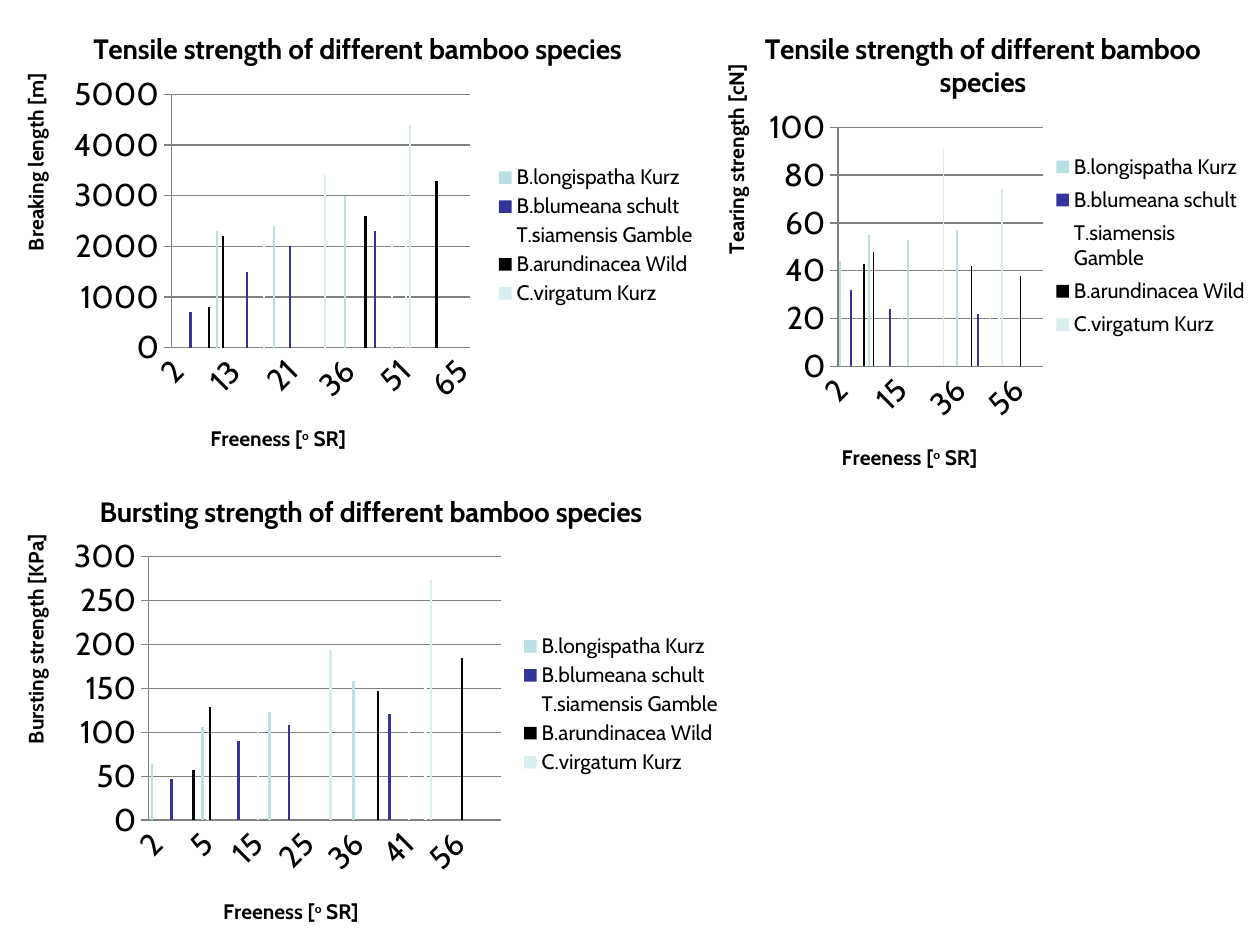
from lxml import etree
from pptx import Presentation
from pptx.chart.data import CategoryChartData
from pptx.dml.color import RGBColor
from pptx.enum.chart import XL_CHART_TYPE, XL_LEGEND_POSITION, XL_TICK_MARK
from pptx.oxml import parse_xml
from pptx.oxml.ns import nsdecls, qn
from pptx.util import Inches, Pt

BLACK = RGBColor(0x00, 0x00, 0x00)
GREY = RGBColor(0x80, 0x80, 0x80)
FONT_NAME = "Cabin"

# Freeness grades, and for each species its colour and measured grades
FREENESS = [2, 3, 4, 5, 13, 14, 15, 18, 21, 25, 27,
            35, 36, 37, 38, 41, 51, 54, 56, 61, 65]
SPECIES = [
    ("B.longispatha Kurz", RGBColor(0xBB, 0xE0, 0xE3), [2, 5, 18, 36, 15]),
    ("B.blumeana schult", RGBColor(0x33, 0x33, 0x99), [3, 14, 21, 38]),
    ("T.siamensis Gamble", RGBColor(0xFF, 0xFF, 0xFF), [5, 15, 41, 51]),
    ("B.arundinacea Wild", BLACK, [4, 5, 37, 56]),
    ("C.virgatum Kurz", RGBColor(0xDA, 0xED, 0xEF), [27, 51]),
]

# Places are in inches on the slide; boxes are left, top, width, height
CHARTS = [
    {
        "title": "Tensile strength of different bamboo species",
        "axis": "Breaking length [m]",
        "box": (0, 0, 5.63, 3.75), "plot": (1.36, 0.75, 2.37, 2.01),
        "legend": (3.93, 1.28, 1.6, 1.18), "title_at": (0.7, 0.2),
        "category_at": (1.64, 3.34), "value_at": (0.14, 0.55),
        "maximum": 5000, "unit": 1000, "label_step": 4,
        "values": [[0, 2300, 2400, 3000, 0], [700, 1500, 2000, 2300],
                   [400, 2300, 2700, 3200], [800, 2200, 2600, 3300],
                   [3400, 4400]],
    },
    {
        "title": "Bursting strength of different bamboo species",
        "axis": "Bursting strength [KPa]",
        "box": (0, 3.67, 5.83, 3.83), "plot": (1.18, 4.42, 2.8, 2.09),
        "legend": (4.13, 5, 1.6, 1.18), "title_at": (0.75, 3.87),
        "category_at": (1.74, 7.09), "value_at": (0.14, 4.21),
        "maximum": 300, "unit": 50, "label_step": 3,
        "values": [[64, 106, 123, 158], [47, 90, 108, 121],
                   [39, 111, 135, 168], [57, 129, 147, 185], [194, 273]],
    },
    {
        "title": "Tensile strength of different bamboo species",
        "axis": "Tearing strength [cN]",
        "box": (5.55, 0, 4.45, 3.91), "plot": (6.65, 1.01, 1.63, 1.9),
        "legend": (8.41, 1.16, 1.5, 1.58), "title_at": (6.03, 0.2),
        "category_at": (6.65, 3.49), "value_at": (5.7, 0.48),
        "maximum": 100, "unit": 20, "label_step": 6,
        "values": [[44, 55, 53, 57], [32, 24, 24 - 2], [22, 28, 28, 30],
                   [43, 48, 42, 38], [91, 74]],
    },
]
CHARTS[2]["values"][1] = [32, 24, None, 22]


def place(element, box, position, inner=False):
    """Give a chart part a manual layout, from its place on the slide."""
    left, top, width, height = box
    fractions = {"x": (position[0] - left) / width,
                 "y": (position[1] - top) / height}
    if len(position) == 4:
        fractions["w"] = position[2] / width
        fractions["h"] = position[3] / height
    settings = [("layoutTarget", "inner")] if inner else []
    settings += [("xMode", "edge"), ("yMode", "edge")]
    settings += [(key, f"{value:.4f}") for key, value in fractions.items()]
    for old in element.findall(qn("c:layout")):
        element.remove(old)
    layout = parse_xml(f"<c:layout {nsdecls('c')}/>")
    manual = etree.SubElement(layout, qn("c:manualLayout"))
    for name, value in settings:
        etree.SubElement(manual, qn(f"c:{name}")).set("val", value)
    before = element.find(qn("c:tx"))
    if before is None:
        before = element.find(qn("c:legendPos"))
    if before is None:
        element.insert(0, layout)
    else:
        before.addnext(layout)


def write_title(owner, parts, size, box, position):
    """Write a chart or axis title; a second part is set as superscript."""
    owner.has_title = True
    title = owner.chart_title if hasattr(owner, "chart_title") else owner.axis_title
    paragraph = title.text_frame.paragraphs[0]
    formats = {"size": Pt(size), "bold": True, "name": FONT_NAME}
    for index, text in enumerate(parts):
        run = paragraph.add_run()
        run.text = text
        for name, value in formats.items():
            setattr(run.font, name, value)
        run.font.color.rgb = BLACK
        if index == 1:
            run.font._element.set("baseline", "30000")
    place(title._element, box, position)
    return title


presentation = Presentation()
presentation.slide_width = Inches(10)
presentation.slide_height = Inches(7.5)
slide = presentation.slides.add_slide(presentation.slide_layouts[6])

for details in CHARTS:
    box = details["box"]

    # Data: each species has values at its own grades only
    data = CategoryChartData()
    data.categories = [str(grade) for grade in FREENESS]
    for (name, _, grades), values in zip(SPECIES, details["values"]):
        measured = dict(zip(grades, values))
        data.add_series(name, [measured.get(grade) for grade in FREENESS])
    chart = slide.shapes.add_chart(
        XL_CHART_TYPE.COLUMN_CLUSTERED, *[Inches(n) for n in box], data).chart
    chart.font.size = Pt(18)
    chart.font.name = FONT_NAME
    chart.font.color.rgb = BLACK

    # Columns
    plot = chart.plots[0]
    plot.gap_width = 150
    plot.overlap = 0
    plot.vary_by_categories = False
    for series, (_, color, _) in zip(plot.series, SPECIES):
        series.format.fill.solid()
        series.format.fill.fore_color.rgb = color
        series.invert_if_negative = False

    # Axes
    category_axis, value_axis = chart.category_axis, chart.value_axis
    category_axis.major_tick_mark = XL_TICK_MARK.NONE
    category_axis.tick_labels.font.size = Pt(18)
    category_axis._element.find(qn("c:txPr")).find(qn("a:bodyPr")).set("rot", "-2700000")
    skip = parse_xml(f'<c:tickLblSkip {nsdecls("c")} val="{details["label_step"]}"/>')
    category_axis._element.find(qn("c:noMultiLvlLbl")).addprevious(skip)
    value_axis.major_tick_mark = XL_TICK_MARK.CROSS
    value_axis.has_major_gridlines = True
    value_axis.minimum_scale = 0
    value_axis.maximum_scale = details["maximum"]
    value_axis.major_unit = details["unit"]
    value_axis.tick_labels.number_format = "General"
    value_axis.tick_labels.number_format_is_linked = False
    for part in (category_axis, value_axis, value_axis.major_gridlines):
        part.format.line.color.rgb = GREY
        part.format.line.width = Pt(0.75)

    # Titles
    write_title(chart, [details["title"]], 16, box, details["title_at"])
    write_title(category_axis, ["Freeness [", "o", " SR]"], 12, box,
                details["category_at"])
    value_title = write_title(value_axis, [details["axis"]], 12, box,
                              details["value_at"])
    value_title.text_frame._txBody.bodyPr.set("rot", "-5400000")

    # Legend and plot area
    chart.has_legend = True
    chart.legend.position = XL_LEGEND_POSITION.RIGHT
    chart.legend.include_in_layout = False
    chart.legend.font.size = Pt(12)
    place(chart.legend._element, box, details["legend"])
    place(chart._chartSpace.chart.plotArea, box, details["plot"], inner=True)

presentation.save("out.pptx")
